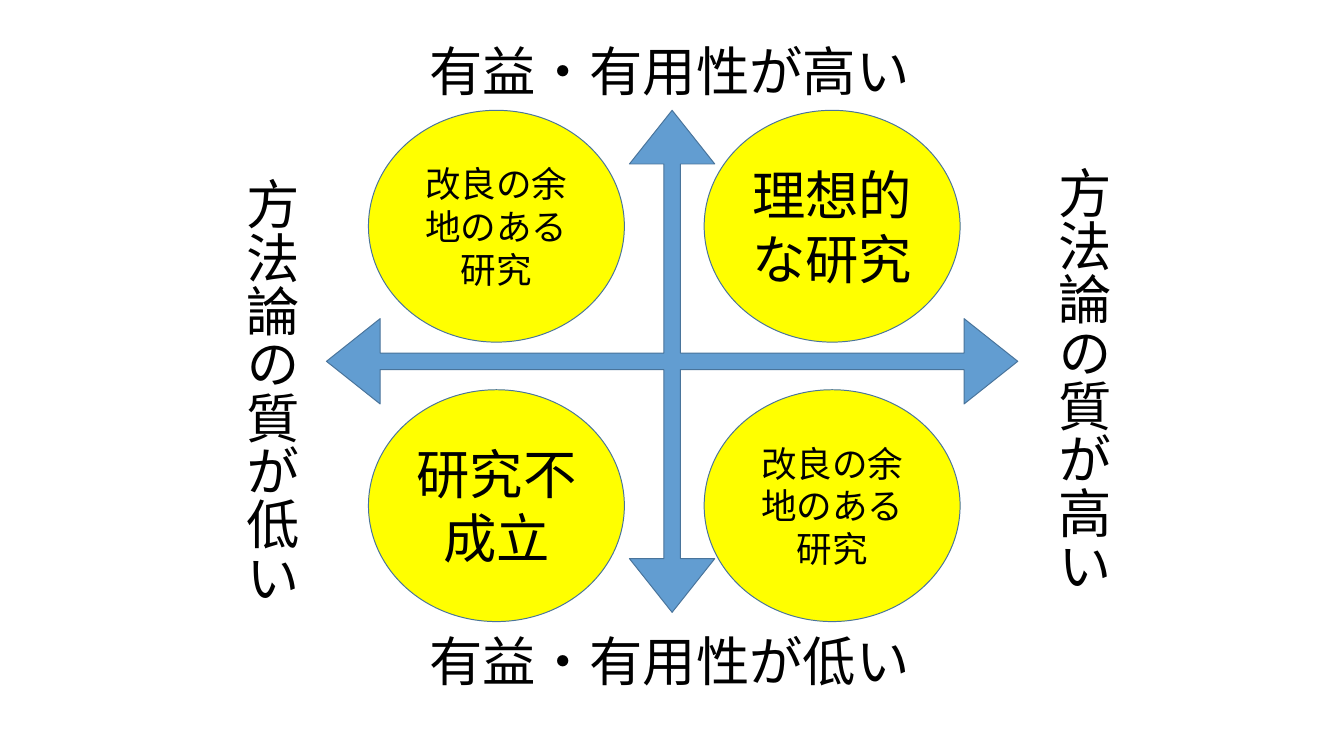
import pptx
import pptx.dml.color
import pptx.enum.shapes
import pptx.enum.text
import pptx.util

Cm = pptx.util.Cm
SHAPE = pptx.enum.shapes.MSO_SHAPE

BLACK = "000000"
BLUE = "629DD1"
OUTLINE = "49749B"
YELLOW = "FFFF00"

AXIS_LABELS = [
    ("有益・有用性が高い", 15.09, 1.24, False),
    ("有益・有用性が低い", 15.09, 22.3, False),
    ("方法論の質が高い", 37.13, 5.69, True),
    ("方法論の質が低い", 8.13, 6.1, True),
]

QUADRANTS = [
    [("改良の余地のある研究", 36), ("理想的な研究", 54)],
    [("研究不成立", 54), ("改良の余地のある研究", 36)],
]


def color(value):
    return pptx.dml.color.RGBColor.from_string(value)


def write(frame, text, size):
    para = frame.paragraphs[0]
    para.text = text
    para.font.name = "Calibri"
    para.font.size = pptx.util.Pt(size)
    para.font.color.rgb = color(BLACK)
    return para


def add_axis_label(page, text, left, top, vertical):
    width, height = (2.82, 15.65) if vertical else (17.83, 2.57)
    box = page.shapes.add_textbox(Cm(left), Cm(top), Cm(width), Cm(height))
    frame = box.text_frame
    frame.word_wrap = False
    frame.auto_size = pptx.enum.text.MSO_AUTO_SIZE.SHAPE_TO_FIT_TEXT
    if vertical:
        box.element.xpath(".//a:bodyPr")[0].set("vert", "eaVert")
    write(frame, text, 54)


def add_figure(page, kind, left, top, width, height, fill):
    figure = page.shapes.add_shape(kind, Cm(left), Cm(top), Cm(width), Cm(height))
    figure.shadow.inherit = False
    figure.fill.solid()
    figure.fill.fore_color.rgb = color(fill)
    figure.line.color.rgb = color(OUTLINE)
    figure.line.width = pptx.util.Pt(1)
    return figure


def add_axes(page):
    arrow = add_figure(page, SHAPE.QUAD_ARROW, 11.66, 3.94, 24.69, 17.93, BLUE)
    for index, ratio in enumerate((0.033, 0.085, 0.107)):
        arrow.adjustments[index] = ratio


def add_quadrant(page, row, column, text, size):
    left = 13.16 + column * 11.99
    top = 3.94 + row * 9.98
    ellipse = add_figure(page, SHAPE.OVAL, left, top, 9.14, 8.28, YELLOW)
    frame = ellipse.text_frame
    frame.word_wrap = True
    frame.vertical_anchor = pptx.enum.text.MSO_ANCHOR.MIDDLE
    write(frame, text, size).alignment = pptx.enum.text.PP_ALIGN.CENTER


def main():
    deck = pptx.Presentation()
    deck.slide_width, deck.slide_height = Cm(48), Cm(27)
    page = deck.slides.add_slide(deck.slide_layouts[6])
    for label in AXIS_LABELS:
        add_axis_label(page, *label)
    add_axes(page)
    for row, quadrants in enumerate(QUADRANTS):
        for column, (text, size) in enumerate(quadrants):
            add_quadrant(page, row, column, text, size)
    deck.save("out.pptx")


if __name__ == "__main__":
    main()
